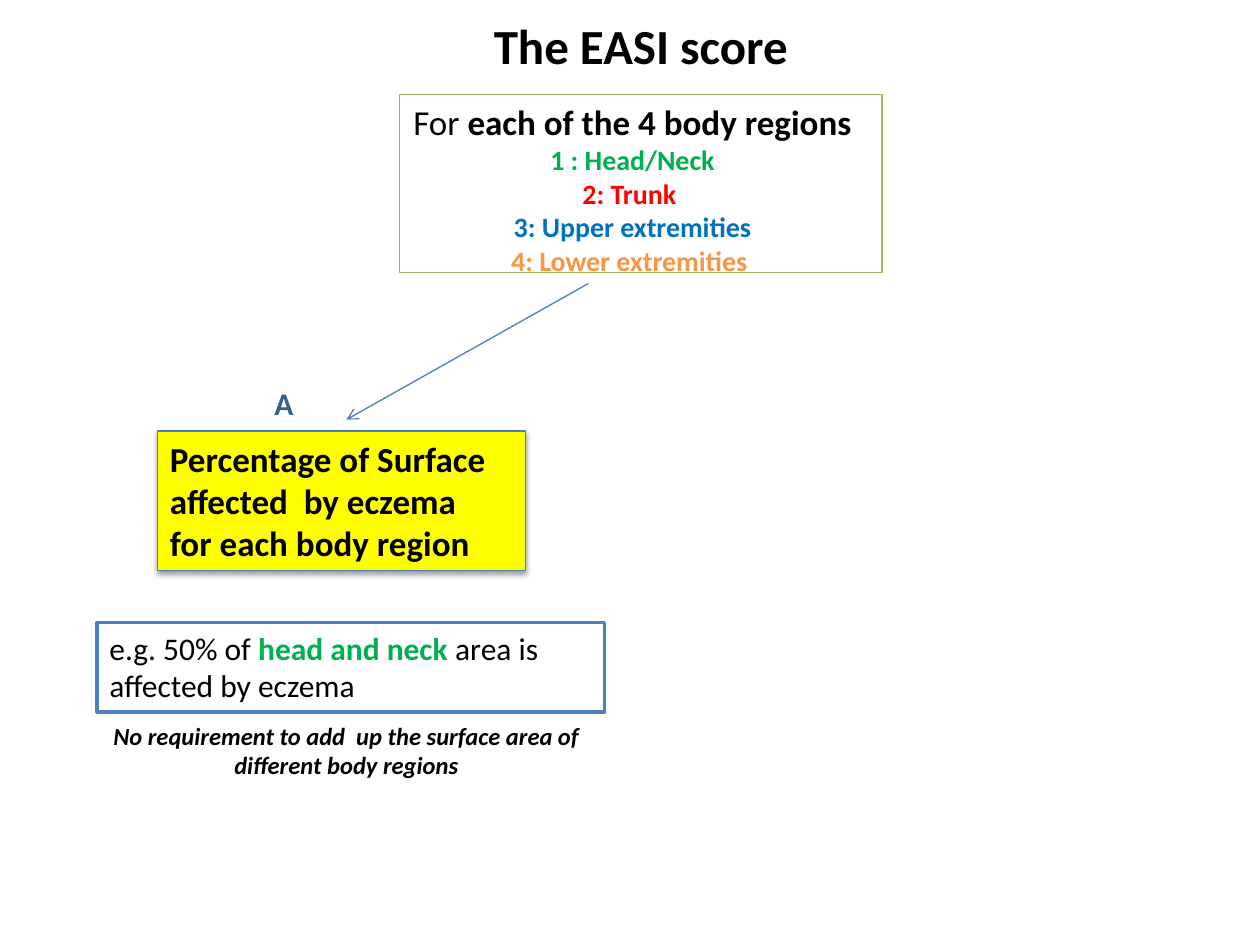
from dataclasses import dataclass

from lxml.etree import SubElement
from pptx import Presentation
from pptx.dml.color import RGBColor
from pptx.enum.shapes import MSO_CONNECTOR, MSO_SHAPE
from pptx.enum.text import MSO_ANCHOR, MSO_AUTO_SIZE, PP_ALIGN
from pptx.oxml.ns import qn
from pptx.util import Inches, Pt


@dataclass(frozen=True)
class Theme:
    font: str = "Calibri"
    black: str = "000000"
    white: str = "FFFFFF"
    yellow: str = "FFFF00"
    label: str = "376092"
    example_line: str = "4F81BD"
    step_line: str = "4B7EBC"
    region_line: str = "98B955"
    head: str = "00B050"
    trunk: str = "FF0000"
    upper: str = "0070C0"
    lower: str = "F79646"
    title_size: int = 28
    heading_size: int = 20
    text_size: int = 18
    region_size: int = 16
    note_size: int = 14


THEME = Theme()


def rgb(value):
    return RGBColor.from_string(value)


def place(shape, left, top, width, height):
    box = {"left": left, "top": top, "width": width, "height": height}
    for name, value in box.items():
        setattr(shape, name, Inches(value))


def outline(shape, color, width):
    shape.line.color.rgb = rgb(color)
    shape.line.width = Pt(width)


def fill(shape, color):
    shape.fill.solid()
    shape.fill.fore_color.rgb = rgb(color)


def run(text, size, color=THEME.black, bold=False, italic=False):
    """Describe one piece of text and its font."""
    return text, {"name": THEME.font, "size": Pt(size), "bold": bold, "italic": italic}, color


def write(shape, paragraphs, align=PP_ALIGN.LEFT):
    """Write paragraphs, each a list of runs, without bullets or gaps."""
    frame = shape.text_frame
    frame.word_wrap = True
    frame.auto_size = MSO_AUTO_SIZE.SHAPE_TO_FIT_TEXT
    frame.vertical_anchor = MSO_ANCHOR.TOP
    for index, pieces in enumerate(paragraphs):
        paragraph = frame.add_paragraph() if index else frame.paragraphs[0]
        properties = paragraph._p.get_or_add_pPr()
        properties.set("marL", "0")
        properties.set("indent", "0")
        SubElement(properties, qn("a:buNone"))
        for name, value in {"alignment": align, "space_before": Pt(0)}.items():
            setattr(paragraph, name, value)
        for text, font_format, color in pieces:
            piece = paragraph.add_run()
            piece.text = text
            for name, value in font_format.items():
                setattr(piece.font, name, value)
            piece.font.color.rgb = rgb(color)


def add_panel(slide, box, paragraphs, fill_color, line_color, line_width):
    panel = slide.shapes.add_shape(MSO_SHAPE.RECTANGLE, *map(Inches, box))
    panel.shadow.inherit = False
    fill(panel, fill_color)
    outline(panel, line_color, line_width)
    write(panel, paragraphs)
    return panel


def add_label(slide, box, pieces, align=PP_ALIGN.LEFT):
    label = slide.shapes.add_textbox(*map(Inches, box))
    write(label, [pieces], align)


def add_arrow(slide, start, end):
    arrow = slide.shapes.add_connector(MSO_CONNECTOR.STRAIGHT, *map(Inches, start + end))
    outline(arrow, THEME.step_line, 0.75)
    SubElement(arrow.line._get_or_add_ln(), qn("a:tailEnd"), type="arrow")
    SubElement(arrow._element.spPr, qn("a:effectLst"))


def drop_shadow(shape):
    effects = shape._element.spPr.find(qn("a:effectLst"))
    shadow = SubElement(effects, qn("a:outerShdw"), blurRad=str(Pt(3.1)),
                        dist=str(Pt(1.6)), dir="5400000", rotWithShape="0")
    color = SubElement(shadow, qn("a:srgbClr"), val=THEME.black)
    SubElement(color, qn("a:alpha"), val="38000")


def fill_title(title):
    place(title, 3.75, 0.07, 2.67, 0.57)
    fill(title, THEME.white)
    outline(title, THEME.white, 2)
    write(title, [[run("The EASI score", THEME.title_size, bold=True)]], PP_ALIGN.CENTER)


def fill_regions(body):
    place(body, 3.17, 0.75, 3.83, 1.51)
    outline(body, THEME.region_line, 0.75)
    heading = [run("For ", THEME.heading_size),
               run("each of the 4 body regions", THEME.heading_size, bold=True)]
    regions = [("1 : Head/Neck", THEME.head), ("2: Trunk ", THEME.trunk),
               ("3: Upper extremities", THEME.upper), ("4: Lower extremities ", THEME.lower)]
    items = [[run(text, THEME.region_size, color, bold=True)] for text, color in regions]
    write(body, [heading] + items, PP_ALIGN.CENTER)
    # The heading sits slightly left of centre
    body.text_frame.paragraphs[0]._p.pPr.set("marR", str(Inches(0.13)))


def main():
    deck = Presentation()
    deck.slide_width, deck.slide_height = Inches(10), Inches(7.5)
    slide = deck.slides.add_slide(deck.slide_layouts[1])

    # Title and body regions
    fill_title(slide.shapes.title)
    fill_regions(slide.placeholders[1])

    # Step A: affected surface
    add_label(slide, (2.08, 3, 1, 0.4), [run("A", THEME.text_size, THEME.label, bold=True)])
    add_arrow(slide, (4.67, 2.25), (2.75, 3.33))
    step_lines = ("Percentage of Surface affected  by eczema", "for each body region")
    surface = add_panel(slide, (1.25, 3.42, 2.92, 1.11),
                        [[run(line, THEME.heading_size, bold=True)] for line in step_lines],
                        THEME.yellow, THEME.step_line, 0.75)
    drop_shadow(surface)

    # Example and note
    example = [run("e.g. 50% of ", THEME.text_size),
               run("head and neck ", THEME.text_size, THEME.head, bold=True),
               run("area is affected by eczema", THEME.text_size)]
    add_panel(slide, (0.77, 4.94, 4.03, 0.71), [example], THEME.white, THEME.example_line, 2)
    note = "No requirement to add  up the surface area of different body regions"
    add_label(slide, (0.75, 5.67, 4, 0.57),
              [run(note, THEME.note_size, bold=True, italic=True)], PP_ALIGN.CENTER)

    deck.save("out.pptx")


if __name__ == "__main__":
    main()
